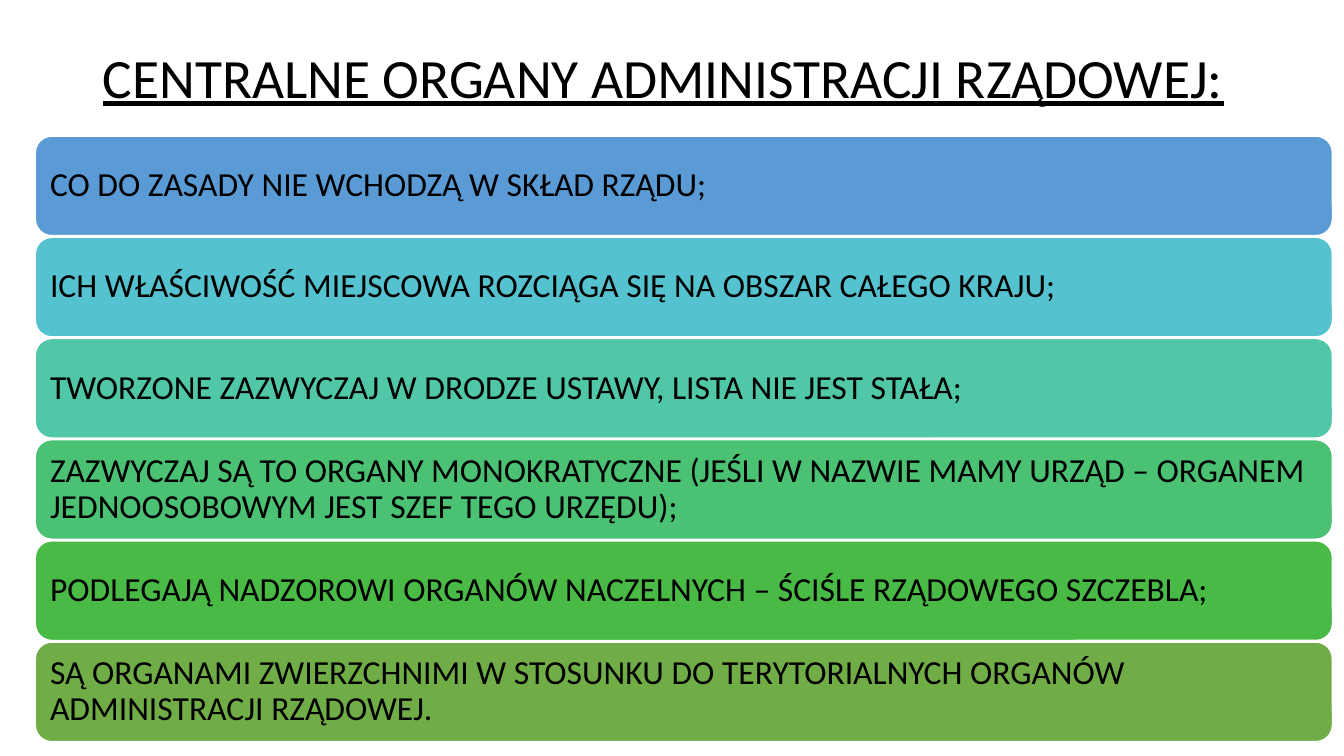
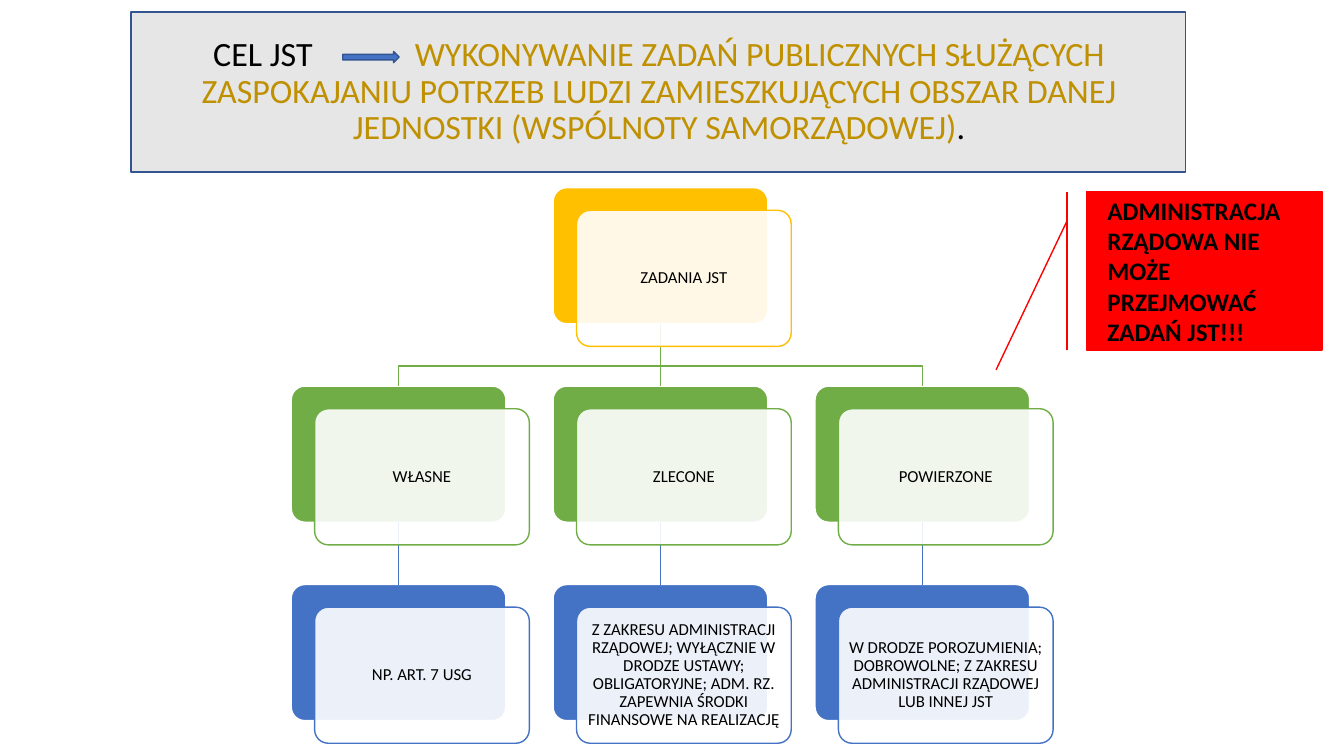
from pptx import Presentation
from pptx import util as u
from pptx.dml.color import RGBColor
from pptx.enum import shapes, text
from pptx.oxml.ns import qn
from lxml import etree

Cm, Pt = u.Cm, u.Pt
FONT = "Calibri"

BLACK = RGBColor(0x00, 0x00, 0x00)
WHITE = RGBColor(0xFF, 0xFF, 0xFF)
GRAY = RGBColor(0xE7, 0xE6, 0xE6)
BLUE = RGBColor(0x44, 0x72, 0xC4)
DARK_BLUE = RGBColor(0x32, 0x54, 0x91)
GREEN = RGBColor(0x70, 0xAD, 0x47)
GOLD = RGBColor(0xFF, 0xC0, 0x00)
DARK_GOLD = RGBColor(0xBF, 0x90, 0x00)
RED = RGBColor(0xFF, 0x00, 0x00)
LIGHT_BLUE = RGBColor(0x5B, 0x9B, 0xD5)
CYAN = RGBColor(0x55, 0xC3, 0xCF)
TEAL = RGBColor(0x50, 0xC8, 0xA7)
SEA_GREEN = RGBColor(0x4B, 0xC1, 0x74)
BRIGHT_GREEN = RGBColor(0x4A, 0xBA, 0x46)

FEATURES = [
    ("CO DO ZASADY NIE WCHODZĄ W SKŁAD RZĄDU;", LIGHT_BLUE),
    ("ICH WŁAŚCIWOŚĆ MIEJSCOWA ROZCIĄGA SIĘ NA OBSZAR CAŁEGO KRAJU;", CYAN),
    ("TWORZONE ZAZWYCZAJ W DRODZE USTAWY, LISTA NIE JEST STAŁA;", TEAL),
    ("ZAZWYCZAJ SĄ TO ORGANY MONOKRATYCZNE (JEŚLI W NAZWIE MAMY URZĄD – ORGANEM "
     "JEDNOOSOBOWYM JEST SZEF TEGO URZĘDU);", SEA_GREEN),
    ("PODLEGAJĄ NADZOROWI ORGANÓW NACZELNYCH – ŚCIŚLE RZĄDOWEGO SZCZEBLA;", BRIGHT_GREEN),
    ("SĄ ORGANAMI ZWIERZCHNIMI W STOSUNKU DO TERYTORIALNYCH ORGANÓW "
     "ADMINISTRACJI RZĄDOWEJ.", GREEN),
]

TASKS = [
    ("WŁASNE", "NP. ART. 7 USG"),
    ("ZLECONE", "Z ZAKRESU ADMINISTRACJI RZĄDOWEJ; WYŁĄCZNIE W DRODZE USTAWY; "
                "OBLIGATORYJNE; ADM. RZ. ZAPEWNIA ŚRODKI FINANSOWE NA REALIZACJĘ"),
    ("POWIERZONE", "W DRODZE POROZUMIENIA; DOBROWOLNE; Z ZAKRESU ADMINISTRACJI "
                   "RZĄDOWEJ LUB INNEJ JST"),
]


def write_text(shape, runs, size, align="LEFT", spacing=0.9, insets=(0.25, 0.13, 0.25, 0.13),
               tab=None, **font_format):
    """Fill the shape with one paragraph; runs is a string or (text, colour) pairs."""
    frame = shape.text_frame
    frame.word_wrap = True
    frame.auto_size = text.MSO_AUTO_SIZE.NONE
    frame.vertical_anchor = text.MSO_ANCHOR.MIDDLE
    (frame.margin_left, frame.margin_top,
     frame.margin_right, frame.margin_bottom) = map(Cm, insets)
    paragraph = frame.paragraphs[0]
    paragraph.alignment = getattr(text.PP_ALIGN, align)
    paragraph.line_spacing = spacing
    if tab:
        tabs = etree.SubElement(paragraph._p.get_or_add_pPr(), qn("a:tabLst"))
        etree.SubElement(tabs, qn("a:tab"), pos=str(Cm(tab)), algn="l")
    for words, color in [(runs, BLACK)] if isinstance(runs, str) else runs:
        run = paragraph.add_run()
        run.text = words
        run.font.name, run.font.size = FONT, Pt(size)
        run.font.color.rgb = color
        for name, value in font_format.items():
            setattr(run.font, name, value)


class Deck:
    NODE_WIDTH, NODE_HEIGHT = 5.41, 3.43
    BEND_ABOVE_CHILD = 0.51

    def __init__(self):
        self.presentation = Presentation()
        self.presentation.slide_width = Cm(33.87)
        self.presentation.slide_height = Cm(19.05)
        self.slide = None

    def new_slide(self):
        self.slide = self.presentation.slides.add_slide(self.presentation.slide_layouts[5])

    def paint(self, shape, fill, line):
        shape.fill.solid()
        shape.fill.fore_color.rgb = fill
        shape.line.color.rgb = line
        shape.line.width = Pt(1)

    def title(self, box, runs, size, **text_format):
        title = self.slide.shapes.title
        title.left, title.top, title.width, title.height = map(Cm, box)
        write_text(title, runs, size, **text_format)
        return title

    def shape(self, kind, box, fill, line, corner=None):
        shape = self.slide.shapes.add_shape(getattr(shapes.MSO_SHAPE, kind), *map(Cm, box))
        shape.shadow.inherit = False
        self.paint(shape, fill, line)
        if corner is not None:
            shape.adjustments[0] = corner
        return shape

    def node_back(self, left, top, color):
        box = (left, top, self.NODE_WIDTH, self.NODE_HEIGHT)
        return self.shape("ROUNDED_RECTANGLE", box, color, WHITE, corner=0.1)

    def node_front(self, back, words, color):
        """Lay the translucent text card over a coloured back, shifted down and right."""
        box = (back.left.cm + 0.59, back.top.cm + 0.57, self.NODE_WIDTH, self.NODE_HEIGHT)
        card = self.shape("ROUNDED_RECTANGLE", box, WHITE, color, corner=0.1)
        fill_color = card._element.spPr.find(qn("a:solidFill"))[0]
        etree.SubElement(fill_color, qn("a:alpha"), val="90000")
        write_text(card, words, 12, align="CENTER", insets=(0.13,) * 4)

    def straight_link(self, parent, child, color):
        link = self.slide.shapes.add_connector(shapes.MSO_CONNECTOR.STRAIGHT, 0, 0, 0, 0)
        link.begin_connect(parent, 2)
        link.end_connect(child, 0)
        link.line.color.rgb = color
        link.line.width = Pt(1)
        etree.SubElement(link._element.spPr, qn("a:effectLst"))

    def elbow_link(self, parent, child, color):
        start_x = parent.left + parent.width // 2
        end_x = child.left + child.width // 2
        bend_y = child.top - Cm(self.BEND_ABOVE_CHILD)
        builder = self.slide.shapes.build_freeform(start_x, parent.top + parent.height)
        builder.add_line_segments(
            [(start_x, bend_y), (end_x, bend_y), (end_x, child.top)], close=False)
        link = builder.convert_to_shape()
        link.shadow.inherit = False
        link.fill.background()
        link.line.color.rgb = color
        link.line.width = Pt(1)


def build_central_bodies(deck):
    deck.new_slide()
    deck.title((2.34, 1, 29.21, 2.05), "CENTRALNE ORGANY ADMINISTRACJI RZĄDOWEJ:", 39.6,
               underline=True)
    for row, (words, color) in enumerate(FEATURES):
        bar = deck.shape("ROUNDED_RECTANGLE", (0.89, 3.43 + 2.55 * row, 32.69, 2.51),
                         color, WHITE)
        write_text(bar, words, 24, insets=(0.25,) * 4)


def build_local_tasks(deck):
    deck.new_slide()
    goal = [
        ("CEL JST \t", BLACK),
        ("WYKONYWANIE ZADAŃ PUBLICZNYCH SŁUŻĄCYCH ZASPOKAJANIU POTRZEB LUDZI "
         "ZAMIESZKUJĄCYCH OBSZAR DANEJ JEDNOSTKI (WSPÓLNOTY SAMORZĄDOWEJ)", DARK_GOLD),
        (".", BLACK),
    ]
    title = deck.title((3.3, 0.3, 26.57, 4.04), goal, 24.3, align="CENTER",
                       insets=(0.95, 0.13, 0.9, 0.13), tab=5.08)
    deck.paint(title, GRAY, DARK_BLUE)
    deck.shape("RIGHT_ARROW", (8.64, 1.3, 1.42, 0.28), BLUE, DARK_BLUE)

    left, top, column_step, row_step = 7.34, 4.73, 6.6, 5
    root = deck.node_back(left + column_step, top, GOLD)
    cards = [(root, "ZADANIA JST", GOLD)]
    for column, (kind, details) in enumerate(TASKS):
        x = left + column * column_step
        kind_back = deck.node_back(x, top + row_step, GREEN)
        details_back = deck.node_back(x, top + 2 * row_step, BLUE)
        link_root = deck.straight_link if column == 1 else deck.elbow_link
        link_root(root, kind_back, GREEN)
        deck.straight_link(kind_back, details_back, BLUE)
        cards += [(kind_back, kind, GREEN), (details_back, details, BLUE)]
    for card in cards:
        deck.node_front(*card)

    callout = deck.shape("LINE_CALLOUT_1_BORDER_AND_ACCENT_BAR", (27.38, 4.83, 5.94, 3.99),
                         RED, RED)
    write_text(callout, "ADMINISTRACJA RZĄDOWA NIE MOŻE PRZEJMOWAĆ ZADAŃ JST!!!", 18,
               spacing=1.0, insets=(0.53, 0, 0.6, 0), bold=True)


def main():
    deck = Deck()
    build_central_bodies(deck)
    build_local_tasks(deck)
    deck.presentation.save("out.pptx")


if __name__ == "__main__":
    main()
